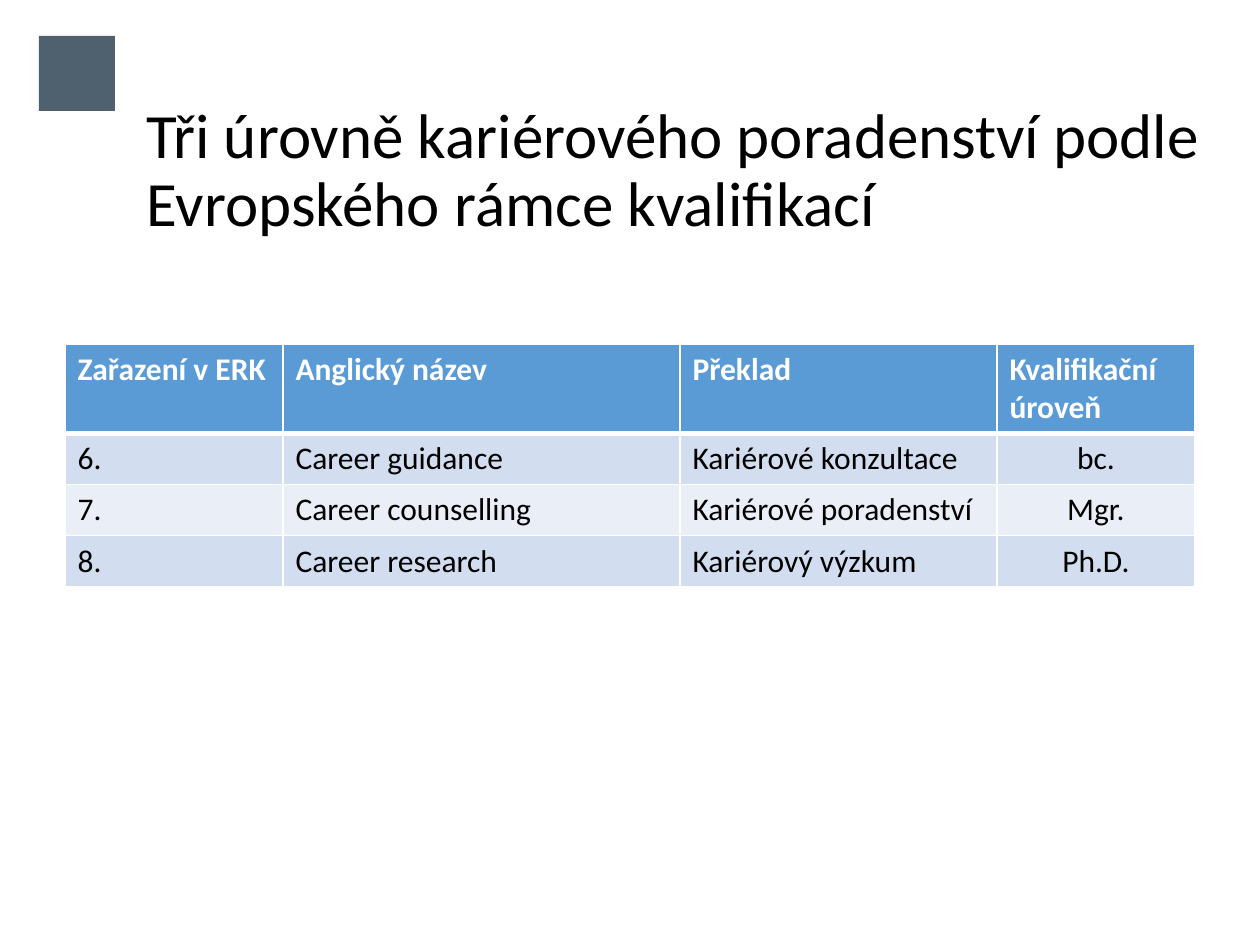
from dataclasses import dataclass

from lxml import etree
from pptx import Presentation
from pptx.dml.color import RGBColor
from pptx.enum.shapes import MSO_SHAPE
from pptx.enum.text import MSO_ANCHOR, MSO_AUTO_SIZE, PP_ALIGN
from pptx.oxml.ns import qn
from pptx.util import Emu, Pt

LEFT, CENTER = PP_ALIGN.LEFT, PP_ALIGN.CENTER
MIDDLE = MSO_ANCHOR.MIDDLE
NO_AUTOFIT = MSO_AUTO_SIZE.NONE
RECTANGLE = MSO_SHAPE.RECTANGLE
TITLE_ONLY = 5
EMU_PER_PX = 914400 / 126


@dataclass(frozen=True)
class Theme:
    font: str = "Calibri"
    title_size: int = 36
    table_size: int = 18
    text: str = "000000"
    header_text: str = "FFFFFF"
    header_fill: str = "5B9BD5"
    bands: tuple = ("D2DEEF", "EAEFF7")
    border: str = "FFFFFF"
    thin: int = 1
    thick: int = 3
    emblem: str = "4F606E"


THEME = Theme()

TITLE = "Tři úrovně kariérového poradenství podle Evropského rámce kvalifikací"
LEVELS = [
    ["Zařazení v ERK", "Anglický název", "Překlad", "Kvalifikační úroveň"],
    ["6.", "Career guidance", "Kariérové konzultace", "bc."],
    ["7.", "Career counselling", "Kariérové poradenství", "Mgr."],
    ["8.", "Career research", "Kariérový výzkum", "Ph.D."],
]
COLUMN_WIDTHS = [218, 397, 317, 198]
HEADER_HEIGHT, ROW_HEIGHT = 88, 51


def px(length):
    return Emu(round(length * EMU_PER_PX))


def set_values(target, values):
    for name, value in values.items():
        setattr(target, name, value)


def write_text(frame, text, size, color, bold=False, align=LEFT):
    para = frame.paragraphs[0]
    para.alignment = align
    span = para.add_run()
    span.text = text
    set_values(span.font, {"name": THEME.font, "size": Pt(size), "bold": bold})
    span.font.color.rgb = RGBColor.from_string(color)
    return para


def add_title(page, left, top, width, height):
    title = page.shapes.title
    set_values(title, {"left": px(left), "top": px(top),
                       "width": px(width), "height": px(height)})
    set_values(title.text_frame, {"word_wrap": True, "auto_size": NO_AUTOFIT,
                                  "vertical_anchor": MIDDLE})
    para = write_text(title.text_frame, TITLE, THEME.title_size, THEME.text)
    set_values(para, {"line_spacing": 0.9, "space_before": Pt(0)})


def add_emblem(page, left, top, width, height):
    box = page.shapes.add_shape(RECTANGLE, px(left), px(top), px(width), px(height))
    box.shadow.inherit = False
    box.fill.solid()
    box.fill.fore_color.rgb = RGBColor.from_string(THEME.emblem)
    box.line.fill.background()


def set_borders(cell, widths):
    properties = cell._tc.get_or_add_tcPr()
    for side, width in widths.items():
        line = etree.SubElement(properties, qn(f"a:ln{side}"), w=str(Pt(width)))
        fill = etree.SubElement(line, qn("a:solidFill"))
        etree.SubElement(fill, qn("a:srgbClr"), val=THEME.border)


def format_cell(cell, text, row, column):
    header = row == 0
    centred = not header and column == len(COLUMN_WIDTHS) - 1
    set_borders(cell, {"L": THEME.thin, "R": THEME.thin,
                       "T": THEME.thick if row == 1 else THEME.thin,
                       "B": THEME.thick if header else THEME.thin})
    color = THEME.header_fill if header else THEME.bands[(row - 1) % 2]
    cell.fill.solid()
    cell.fill.fore_color.rgb = RGBColor.from_string(color)
    write_text(cell.text_frame, text, THEME.table_size,
               THEME.header_text if header else THEME.text,
               bold=header, align=CENTER if centred else LEFT)


def add_level_table(page, left, top):
    heights = [HEADER_HEIGHT] + [ROW_HEIGHT] * (len(LEVELS) - 1)
    table = page.shapes.add_table(
        len(LEVELS), len(COLUMN_WIDTHS), px(left), px(top),
        px(sum(COLUMN_WIDTHS)), px(sum(heights))).table
    for column, width in zip(table.columns, COLUMN_WIDTHS):
        column.width = px(width)
    for row, height in zip(table.rows, heights):
        row.height = px(height)
    for row, texts in enumerate(LEVELS):
        for column, text in enumerate(texts):
            format_cell(table.cell(row, column), text, row, column)


def main():
    deck = Presentation()
    set_values(deck, {"slide_width": px(1260), "slide_height": px(945)})
    page = deck.slides.add_slide(deck.slide_layouts[TITLE_ONLY])

    # Plain emblem in the corner, beside the heading
    add_emblem(page, 39, 36, 76, 75)
    add_title(page, 134, 86, 1096, 173)

    # Qualification levels
    add_level_table(page, 65, 344)

    deck.save("out.pptx")


if __name__ == "__main__":
    main()
